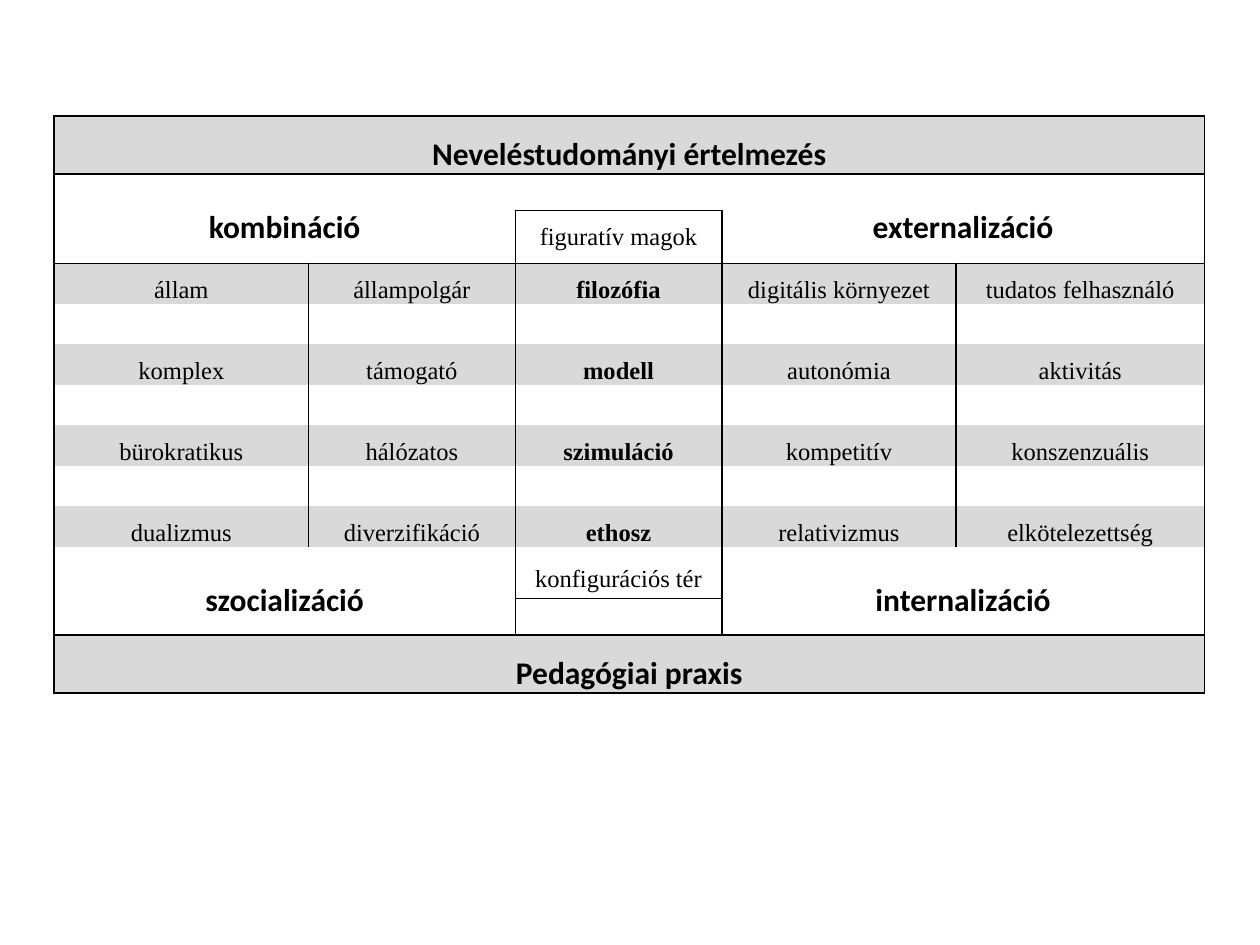
import pptx
import pptx.util
import pptx.dml.color
import pptx.enum.text
import pptx.oxml.ns
from lxml import etree
from pptx.util import Inches

GREY = "D9D9D9"
BLACK = "000000"
NO_STYLE = "{2D5ABB26-0587-4C30-8999-92F81FD0307C}"
COLUMNS = [2.02, 1.64, 1.64, 1.86, 1.97]
ROWS = [0.46, 0.29, 0.42] + [0.32] * 7 + [0.41, 0.29, 0.46]
HEADING = dict(font="Calibri", size=18, bold=True)
TERMS = [
    ["állam", "állampolgár", "filozófia", "digitális környezet", "tudatos felhasználó"],
    ["komplex", "támogató", "modell", "autonómia", "aktivitás"],
    ["bürokratikus", "hálózatos", "szimuláció", "kompetitív", "konszenzuális"],
    ["dualizmus", "diverzifikáció", "ethosz", "relativizmus", "elkötelezettség"],
]


def rgb(color):
    """Return the colour for a hex string."""
    return pptx.dml.color.RGBColor.from_string(color)


def sub(parent, tag, **attributes):
    """Add a DrawingML child element."""
    return etree.SubElement(parent, pptx.oxml.ns.qn(tag), **attributes)


def add_borders(cell, sides):
    """Draw one-point black lines on the named sides of a cell."""
    tcPr = cell._tc.get_or_add_tcPr()
    for side in "LRTB":
        if side in sides:
            line = sub(tcPr, f"a:ln{side}", w=str(pptx.util.Pt(1)))
            sub(sub(line, "a:solidFill"), "a:srgbClr", val=BLACK)


def write(cell, text, font="Times New Roman", size=14, bold=False, anchor="MIDDLE"):
    """Write centred text in a cell."""
    cell.vertical_anchor = pptx.enum.text.MSO_ANCHOR[anchor]
    p = cell.text_frame.paragraphs[0]
    p.alignment = pptx.enum.text.PP_ALIGN.CENTER
    p.line_spacing = 1.5
    r = p.add_run()
    r.text = text
    r.font.name = font
    r.font.size = pptx.util.Pt(size)
    r.font.bold = bold
    r.font.color.rgb = rgb(BLACK)


def format_cell(cell, sides="", fill=None, text=None, **style):
    """Set the margins, borders, fill and text of a cell."""
    cell.margin_left = cell.margin_right = Inches(0.07)
    cell.margin_top = cell.margin_bottom = 0
    add_borders(cell, sides)
    if fill:
        cell.fill.solid()
        cell.fill.fore_color.rgb = rgb(fill)
    else:
        cell.fill.background()
    if text:
        write(cell, text, **style)
    else:
        sub(cell.text_frame.paragraphs[0]._p, "a:endParaRPr", sz="1200")


def fill_bands(table):
    """Fill the full-width bands at the top and bottom."""
    for row, text in ((0, "Neveléstudományi értelmezés"), (12, "Pedagógiai praxis")):
        table.cell(row, 0).merge(table.cell(row, 4))
        format_cell(table.cell(row, 0), "LRTB", GREY, text, **HEADING)


def fill_quadrants(table):
    """Fill the four process headings and the labels between them."""
    quadrants = [
        (1, 0, "kombináció", "LT"),
        (1, 3, "externalizáció", "TR"),
        (10, 0, "szocializáció", "LRB"),
        (10, 3, "internalizáció", "LRB"),
    ]
    for row, column, text, sides in quadrants:
        table.cell(row, column).merge(table.cell(row + 1, column + 1))
        format_cell(table.cell(row, column), sides, text=text, **HEADING)
    format_cell(table.cell(1, 2), "TB")
    format_cell(table.cell(2, 2), "LRT", text="figuratív magok", anchor="TOP")
    format_cell(table.cell(10, 2), "LRB", text="konfigurációs tér")
    format_cell(table.cell(11, 2), "TB")


def fill_terms(table):
    """Fill the grey term rows and the white rows between them."""
    for row in range(3, 10):
        index, gap = divmod(row - 3, 2)
        for column in range(len(COLUMNS)):
            cell = table.cell(row, column)
            if gap:
                format_cell(cell, "LR")
            else:
                format_cell(cell, "LR", GREY, TERMS[index][column], bold=column == 2)


def add_matrix(slide, left, top):
    """Add the whole matrix with its corner at the given place."""
    frame = slide.shapes.add_table(
        len(ROWS), len(COLUMNS), left, top, Inches(sum(COLUMNS)), Inches(sum(ROWS))
    )
    table = frame.table
    table.first_row = table.horz_banding = False
    table._tbl.tblPr.find(pptx.oxml.ns.qn("a:tableStyleId")).text = NO_STYLE
    for column, width in zip(table.columns, COLUMNS):
        column.width = Inches(width)
    for row, height in zip(table.rows, ROWS):
        row.height = Inches(height)
    fill_bands(table)
    fill_quadrants(table)
    fill_terms(table)


def main():
    """Build and save the slide."""
    prs = pptx.Presentation()
    prs.slide_width, prs.slide_height = Inches(10), Inches(7.5)
    slide = prs.slides.add_slide(prs.slide_layouts[6])
    add_matrix(slide, Inches(0.43), Inches(0.92))
    prs.save("out.pptx")


if __name__ == "__main__":
    main()
